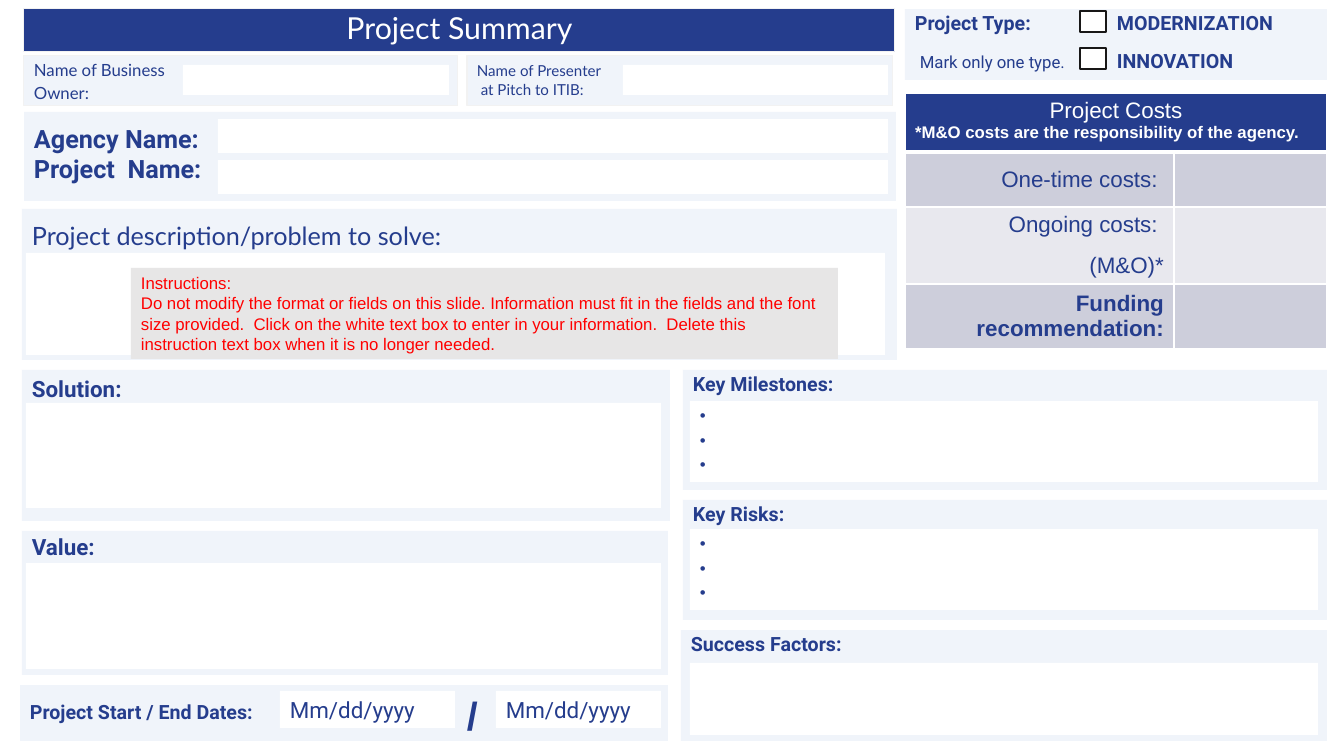
from lxml import etree
from pptx import Presentation
from pptx.dml.color import RGBColor
from pptx.enum.shapes import MSO_SHAPE
from pptx.enum.text import MSO_ANCHOR, PP_ALIGN
from pptx.oxml.ns import qn
from pptx.util import Pt

RECTANGLE = MSO_SHAPE.RECTANGLE
TOP, MIDDLE = MSO_ANCHOR.TOP, MSO_ANCHOR.MIDDLE
LEFT, CENTER, RIGHT = PP_ALIGN.LEFT, PP_ALIGN.CENTER, PP_ALIGN.RIGHT
EMU_PER_PX = 914400 / 100.8
NAVY, PALE, WHITE, EDGE = "253D8D", "F0F4FA", "FFFFFF", "F2F2F2"
BLACK, GREY, RED = "181717", "E7E6E6", "FF0000"
DARK_BAND, LIGHT_BAND = "CDCEDB", "E8E8EE"


def style(name, size, color=NAVY, bold=False):
    return {"name": name, "size": Pt(size), "bold": bold, "color": color}


def line(text, font, **layout):
    return [(text, font)], layout


TITLE = style("Lato", 21.6, WHITE)
OWNER, PRESENTER, DESCRIPTION = (style("Lato", size) for size in (12, 10.8, 18))
AGENCY, HEADING, LABEL = (style("Roboto", size, bold=True) for size in (18, 16, 14))
HINT, DATE, BULLET = (style("Roboto", size) for size in (12, 16, 12))
SLASH = style("Arial", 28, bold=True)
NOTE = style("Arial", 12, RED)
COST_TITLE, COST_NOTE = style("Arial", 16, WHITE), style("Arial", 12, WHITE, True)
COST, COST_BOLD = style("Arial", 16), style("Arial", 16, bold=True)

TIGHT = {"line_spacing": 0.9}
NAMES = {"space_before": Pt(1), "space_after": Pt(1)}
AIRY = {"space_before": Pt(6), "space_after": Pt(6)}
COST_LAYOUT = {"alignment": RIGHT, **AIRY}
TYPE_TAB = 202

PANELS = [
    ((22, 209, 875, 151), PALE, None, TOP,
     [line("Project description/problem to solve:", DESCRIPTION, line_spacing=1.2)]),
    ((22, 370, 648, 151), PALE, None, TOP, [line("Solution:", HEADING)]),
    ((22, 531, 646, 144), PALE, None, TOP, [line("Value:", HEADING, **TIGHT)]),
    ((20, 685, 648, 56), PALE, None, MIDDLE,
     [line("Project Start / End Dates:", LABEL, **TIGHT)]),
    ((683, 370, 644, 120), PALE, None, TOP, [line("Key Milestones:", LABEL, **TIGHT)]),
    ((683, 500, 644, 120), PALE, None, TOP, [line("Key Risks:", LABEL, **TIGHT)]),
    ((681, 630, 646, 111), PALE, None, TOP, [line("Success Factors:", LABEL, **TIGHT)]),
    ((24, 9, 871, 43), NAVY, EDGE, MIDDLE,
     [line("Project Summary", TITLE, alignment=CENTER, line_spacing=0.8)]),
    ((24, 112, 872, 89), PALE, None, TOP,
     [line("Agency Name:", AGENCY, line_spacing=1.2), line("Project  Name:", AGENCY)]),
    ((905, 9, 422, 71), PALE, None, TOP,
     [line("Project Type:\tMODERNIZATION", LABEL, **TIGHT, **AIRY),
      ([(" ", LABEL), ("Mark only one type.\t", HINT), ("INNOVATION", LABEL)],
       {**TIGHT, **AIRY})]),
    ((467, 56, 426, 50), PALE, EDGE, MIDDLE,
     [line("Name of Presenter", PRESENTER, **TIGHT, **NAMES),
      line(" at Pitch to ITIB:", PRESENTER, **TIGHT, **NAMES)]),
    ((24, 56, 434, 50), PALE, EDGE, MIDDLE,
     [line("Name of Business", OWNER, **NAMES), line("Owner:", OWNER, **NAMES)]),
]
BULLETS = [line(" ", BULLET, space_after=Pt(3))] * 3
DATE_LINE = [line("Mm/dd/yyyy", DATE)]
FIELDS = [
    ((183, 65, 266, 30), []), ((623, 65, 265, 30), []),
    ((218, 119, 670, 34), []), ((218, 160, 670, 34), []),
    ((26, 253, 859, 102), []), ((26, 403, 635, 105), []), ((26, 563, 635, 106), []),
    ((280, 691, 175, 37), DATE_LINE), ((496, 691, 165, 37), DATE_LINE),
    ((690, 401, 628, 81), BULLETS), ((690, 529, 628, 81), BULLETS),
    ((690, 663, 628, 72), []),
]
SLASH_AT = (457, 686, 46, 58)
CHECKBOXES = [(1080, top, 26, 21) for top in (11, 48)]
INSTRUCTIONS_AT = (131, 268, 707, 91)
INSTRUCTIONS = [
    line("Instructions:", NOTE),
    line("Do not modify the format or fields on this slide. Information must fit in the "
         "fields and the font size provided.  Click on the white text box to enter in your "
         "information.  Delete this instruction text box when it is no longer needed.", NOTE),
]
COSTS_AT = (905, 93)
COST_COLUMNS = [269, 153]
COST_ROWS = [
    (59, NAVY, TOP, [line("Project Costs", COST_TITLE, alignment=CENTER),
                     line("*M&O costs are the responsibility of the agency.", COST_NOTE)]),
    (55, DARK_BAND, MIDDLE, [line("One-time costs: ", COST, **COST_LAYOUT)]),
    (77, LIGHT_BAND, MIDDLE, [line("Ongoing costs: ", COST, **COST_LAYOUT),
                              line("(M&O)*", COST, **COST_LAYOUT)]),
    (65, DARK_BAND, MIDDLE, [line("Funding recommendation:", COST_BOLD, **COST_LAYOUT)]),
]


def px(value):
    return round(value * EMU_PER_PX)


def place(bounds):
    return [px(value) for value in bounds]


def rgb(color):
    return RGBColor.from_string(color)


def paint(target, color):
    target.fill.solid()
    target.fill.fore_color.rgb = rgb(color)


def write(frame, lines):
    for index, (spans, layout) in enumerate(lines):
        para = frame.add_paragraph() if index else frame.paragraphs[0]
        for name, value in {"alignment": LEFT, **layout}.items():
            setattr(para, name, value)
        for text, font in spans:
            span = para.add_run()
            span.text = text
            for name, value in font.items():
                if name == "color":
                    span.font.color.rgb = rgb(value)
                else:
                    setattr(span.font, name, value)
        properties = para._p.get_or_add_pPr()
        if lines is BULLETS:
            properties.set("marL", str(px(20)))
            properties.set("indent", str(-px(20)))
            etree.SubElement(properties, qn("a:buFont"), typeface="Arial")
            etree.SubElement(properties, qn("a:buChar"), char="•")
        if any("\t" in text for text, font in spans):
            tabs = etree.SubElement(properties, qn("a:tabLst"))
            etree.SubElement(tabs, qn("a:tab"), pos=str(px(TYPE_TAB)), algn="l")


def add_box(page, bounds, fill, edge=None, anchor=TOP, lines=(), width=0.75):
    box = page.shapes.add_shape(RECTANGLE, *place(bounds))
    box.shadow.inherit = False
    paint(box, fill)
    if edge:
        box.line.color.rgb = rgb(edge)
        box.line.width = Pt(width)
    else:
        box.line.fill.background()
    box.text_frame.word_wrap = True
    box.text_frame.vertical_anchor = anchor
    write(box.text_frame, lines)


def add_borders(cell, widths):
    properties = cell._tc.get_or_add_tcPr()
    for index, (side, width) in enumerate(widths.items()):
        border = etree.Element(qn("a:" + side), w=str(Pt(width)))
        fill = etree.SubElement(border, qn("a:solidFill"))
        etree.SubElement(fill, qn("a:srgbClr"), val=WHITE)
        properties.insert(index, border)


def add_costs(page):
    size = (sum(COST_COLUMNS), sum(row[0] for row in COST_ROWS))
    table = page.shapes.add_table(len(COST_ROWS), len(COST_COLUMNS),
                                  *place(COSTS_AT + size)).table
    for column, width in zip(table.columns, COST_COLUMNS):
        column.width = px(width)
    for index, (height, fill, anchor, lines) in enumerate(COST_ROWS):
        table.rows[index].height = px(height)
        for cell in table.rows[index].cells:
            paint(cell, fill)
            cell.vertical_anchor = anchor
            add_borders(cell, {"lnL": 1, "lnR": 1, "lnT": 3 if index == 1 else 1,
                               "lnB": 3 if index == 0 else 1})
        write(table.cell(index, 0).text_frame, lines)
    table.cell(0, 0).merge(table.cell(0, 1))


def main():
    deck = Presentation()
    deck.slide_width, deck.slide_height = px(1344), px(756)
    page = deck.slides.add_slide(deck.slide_layouts[6])
    add_costs(page)
    for panel in PANELS:
        add_box(page, *panel)
    slash = page.shapes.add_textbox(*place(SLASH_AT)).text_frame
    slash.word_wrap = True
    write(slash, [line("/", SLASH)])
    for bounds, lines in FIELDS:
        add_box(page, bounds, WHITE, lines=lines)
    add_box(page, INSTRUCTIONS_AT, GREY, lines=INSTRUCTIONS)
    for bounds in CHECKBOXES:
        add_box(page, bounds, WHITE, BLACK, width=1)
    deck.save("out.pptx")


if __name__ == "__main__":
    main()
